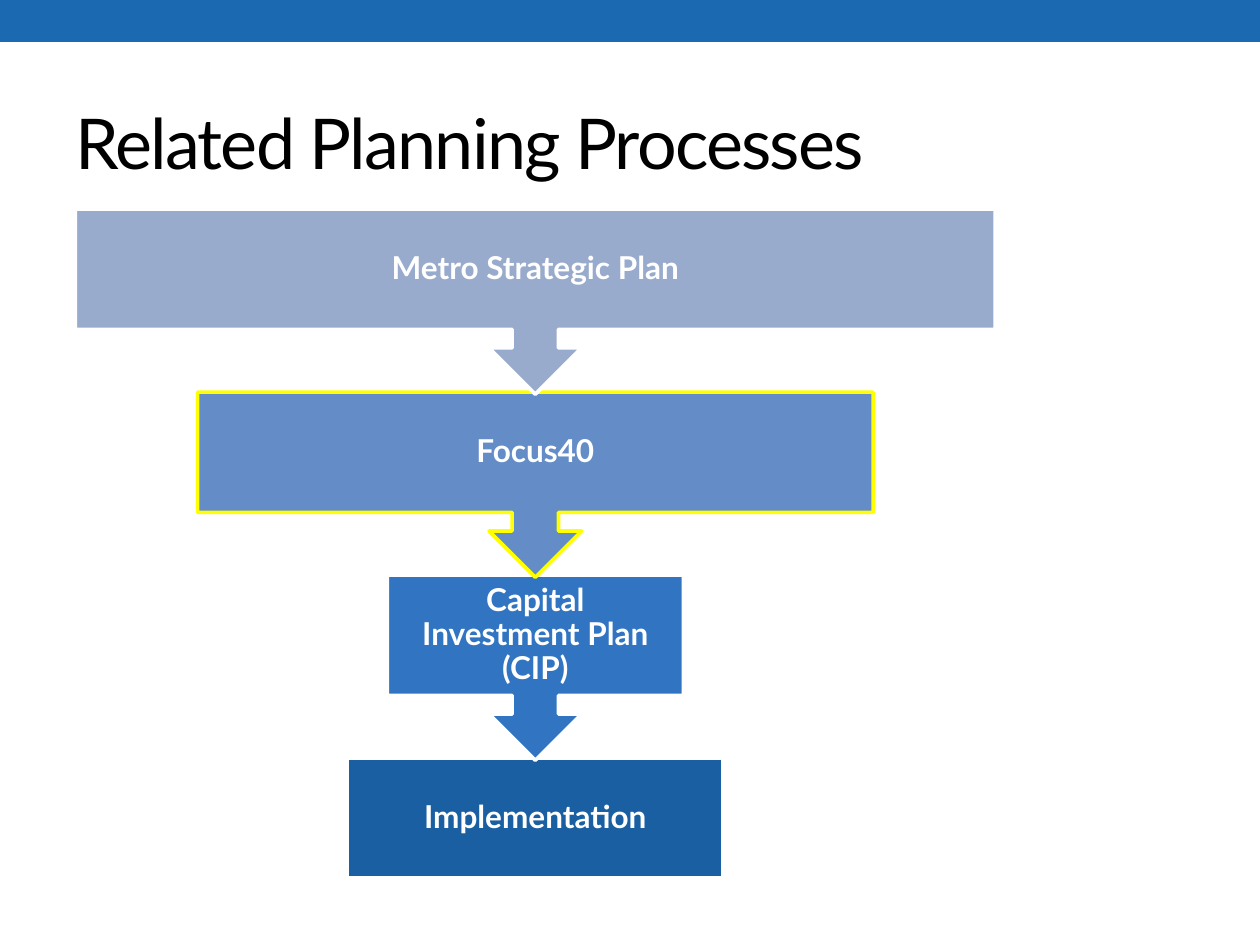
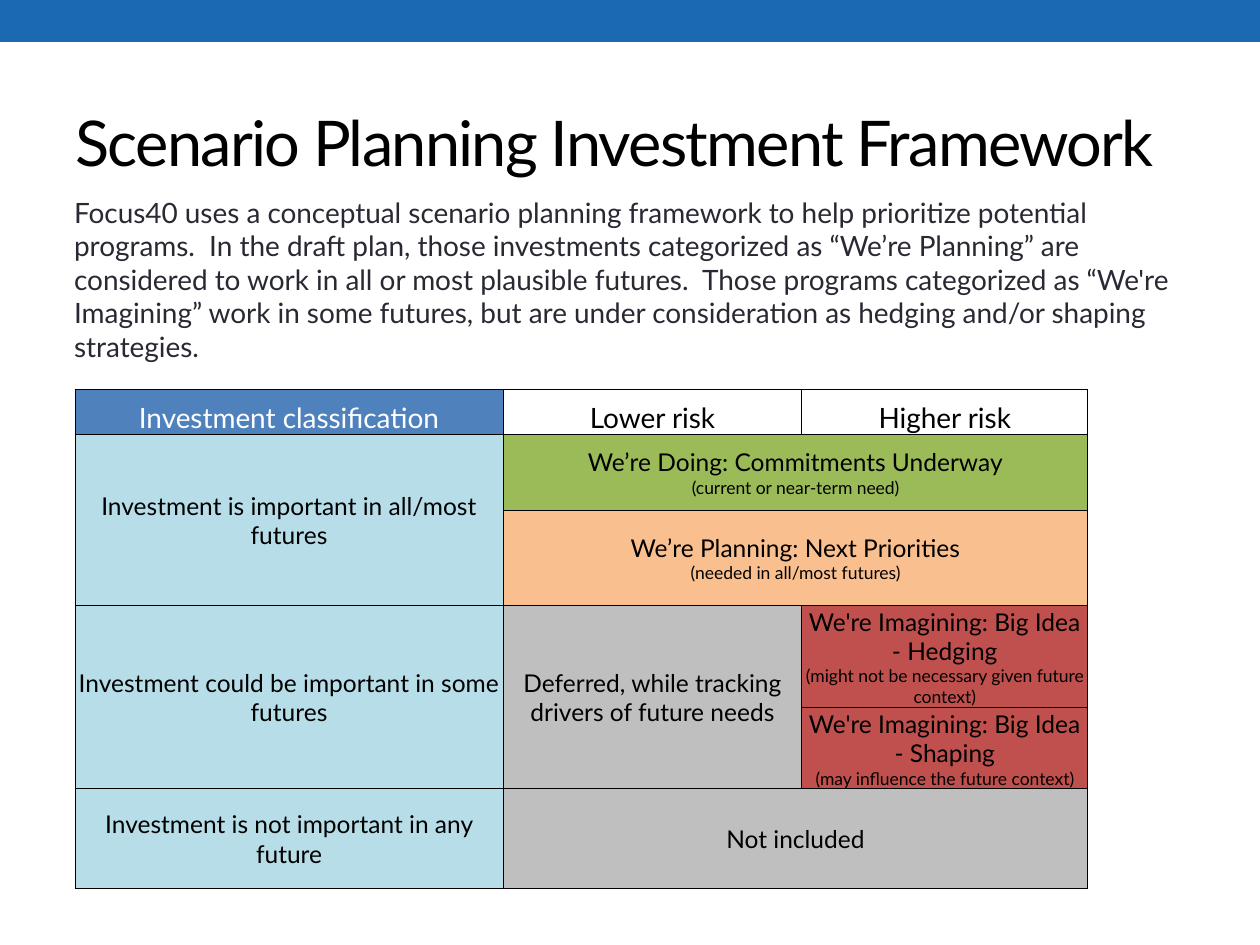
"""Build two planning slides: a process cascade and an investment framework table."""
import dataclasses

import lxml.etree
import pptx
import pptx.dml.color
import pptx.enum.shapes
import pptx.enum.text
import pptx.oxml.ns
import pptx.util

Pt = pptx.util.Pt
Align = pptx.enum.text.PP_ALIGN
Anchor = pptx.enum.text.MSO_ANCHOR
Shape = pptx.enum.shapes.MSO_SHAPE
rgb = pptx.dml.color.RGBColor.from_string
qn = pptx.oxml.ns.qn


@dataclasses.dataclass(frozen=True)
class Theme:
    font: str = "Lato"
    black: str = "000000"
    white: str = "FFFFFF"
    band: str = "1B69B1"
    body: str = "292934"
    highlight: str = "FFFF00"
    strategy: str = "99ABCC"
    focus: str = "648CC7"
    capital: str = "3074C2"
    implementation: str = "195FA1"
    header: str = "4F81BD"
    classification: str = "B7DEE8"
    doing: str = "9BBB59"
    planning: str = "FABF8F"
    imagining: str = "C0504D"
    excluded: str = "BFBFBF"
    title_size: int = 40
    long_title_size: int = 36
    step_size: int = 18
    body_size: int = 16
    cell_size: int = 14
    note_size: int = 10


theme = Theme()


def write_text(frame, text, size, color=theme.black, bold=False, align=Align.LEFT,
               anchor=Anchor.MIDDLE, line_spacing=None, note_size=None, tracking=None):
    """Write one paragraph per line; lines after the first take note_size."""
    frame.word_wrap = True
    frame.vertical_anchor = anchor
    for index, line in enumerate(text.split("\n")):
        paragraph = frame.paragraphs[0] if index == 0 else frame.add_paragraph()
        paragraph.alignment = align
        paragraph.line_spacing = line_spacing
        run = paragraph.add_run()
        run.text = line
        run.font.name = theme.font
        run.font.size = Pt(note_size if index and note_size else size)
        run.font.bold = bold
        run.font.color.rgb = rgb(color)
        if tracking is not None:
            run.font._element.set("spc", str(tracking))


presentation = pptx.Presentation()
presentation.slide_width = Pt(720)
presentation.slide_height = Pt(540)

slides = []
for title, size in (("Related Planning Processes", theme.title_size),
                    ("Scenario Planning Investment Framework", theme.long_title_size)):
    slide = presentation.slides.add_slide(presentation.slide_layouts.get_by_name("Title Only"))
    placeholder = slide.shapes.title
    placeholder.left, placeholder.top = Pt(36), Pt(41.8)
    placeholder.width, placeholder.height = Pt(648), Pt(77.8)
    write_text(placeholder.text_frame, title, size, tracking=-100)
    placeholder.text_frame.auto_size = pptx.enum.text.MSO_AUTO_SIZE.NONE
    slides.append(slide)
process_slide, framework_slide = slides

band = process_slide.shapes.add_shape(Shape.RECTANGLE, 0, 0, presentation.slide_width, Pt(24))
band.shadow.inherit = False
band.fill.solid()
band.fill.fore_color.rgb = rgb(theme.band)
band.line.fill.background()
presentation.slide_master.shapes.element.insert(2, band._element)

steps = [
    ("Metro Strategic Plan", 525.6, theme.strategy, theme.white),
    ("Focus40", 386, theme.focus, theme.highlight),
    ("Capital Investment Plan (CIP)", 169.2, theme.capital, theme.white),
    ("Implementation", 214.6, theme.implementation, theme.white),
]
center, first_top, pitch = 305.9, 119.5, 104.6
last = len(steps) - 1
for index, (label, width, fill, outline) in reversed(list(enumerate(steps))):
    kind, height = (Shape.RECTANGLE, 68.4) if index == last else (Shape.DOWN_ARROW_CALLOUT, 105.8)
    step = process_slide.shapes.add_shape(
        kind, Pt(center - width / 2), Pt(first_top + index * pitch), Pt(width), Pt(height))
    step.shadow.inherit = False
    step.fill.solid()
    step.fill.fore_color.rgb = rgb(fill)
    step.line.color.rgb = rgb(outline)
    step.line.width = Pt(2.08)
    frame = step.text_frame
    frame.margin_left = frame.margin_right = frame.margin_top = frame.margin_bottom = Pt(10)
    write_text(frame, label, theme.step_size, theme.white, bold=True,
               align=Align.CENTER, line_spacing=0.9)

introduction = framework_slide.shapes.add_textbox(Pt(35.3), Pt(108), Pt(648), Pt(93.6))
write_text(
    introduction.text_frame,
    "Focus40 uses a conceptual scenario planning framework to help prioritize potential programs.  "
    "In the draft plan, those investments categorized as “We’re Planning” are considered to work in "
    "all or most plausible futures.  Those programs categorized as “We're Imagining” work in some "
    "futures, but are under consideration as hedging and/or shaping strategies.",
    theme.body_size, theme.body, anchor=Anchor.TOP)

column_widths = [244.8, 170.6, 163.4]
row_heights = [25.7, 43.2, 54.7, 56.2, 45.4, 56.9]
table = framework_slide.shapes.add_table(
    len(row_heights), len(column_widths), Pt(42.8), Pt(222.5),
    Pt(sum(column_widths)), Pt(sum(row_heights))).table
table.first_row = table.horz_banding = False
for column, width in zip(table.columns, column_widths):
    column.width = Pt(width)
for row, height in zip(table.rows, row_heights):
    row.height = Pt(height)

for cell in table.iter_cells():
    properties = cell._tc.get_or_add_tcPr()
    for side in ("a:lnL", "a:lnR", "a:lnT", "a:lnB"):
        border = lxml.etree.SubElement(properties, qn(side), w=str(Pt(0.5)))
        border_fill = lxml.etree.SubElement(border, qn("a:solidFill"))
        lxml.etree.SubElement(border_fill, qn("a:srgbClr"), val=theme.black)
    cell.fill.solid()
    cell.fill.fore_color.rgb = rgb(theme.white)
    cell.margin_left = cell.margin_right = cell.margin_top = Pt(0.7)
    cell.margin_bottom = 0

cells = [
    (0, 0, 1, 1, theme.header, "Investment classification"),
    (0, 1, 1, 1, theme.white, "Lower risk"),
    (0, 2, 1, 1, theme.white, "Higher risk"),
    (1, 0, 2, 1, theme.classification, "Investment is important in all/most futures"),
    (1, 1, 1, 2, theme.doing,
     "We’re Doing: Commitments Underway\n(current or near-term need)"),
    (2, 1, 1, 2, theme.planning,
     "We’re Planning: Next Priorities\n(needed in all/most futures)"),
    (3, 0, 2, 1, theme.classification, "Investment could be important in some futures"),
    (3, 1, 2, 1, theme.excluded, "Deferred, while tracking drivers of future needs"),
    (3, 2, 1, 1, theme.imagining,
     "We're Imagining: Big Idea - Hedging\n(might not be necessary given future context)"),
    (4, 2, 1, 1, theme.imagining,
     "We're Imagining: Big Idea - Shaping\n(may influence the future context)"),
    (5, 0, 1, 1, theme.classification, "Investment is not important in any future"),
    (5, 1, 1, 2, theme.excluded, "Not included"),
]
for row, column, row_span, column_span, fill, text in cells:
    cell = table.cell(row, column)
    if row_span * column_span > 1:
        cell.merge(table.cell(row + row_span - 1, column + column_span - 1))
    cell.fill.fore_color.rgb = rgb(fill)
    write_text(cell.text_frame, text, theme.cell_size if row else theme.body_size,
               theme.white if fill == theme.header else theme.black,
               align=Align.CENTER, note_size=theme.note_size)
    cell.vertical_anchor = Anchor.MIDDLE if row else Anchor.BOTTOM

presentation.save("out.pptx")
